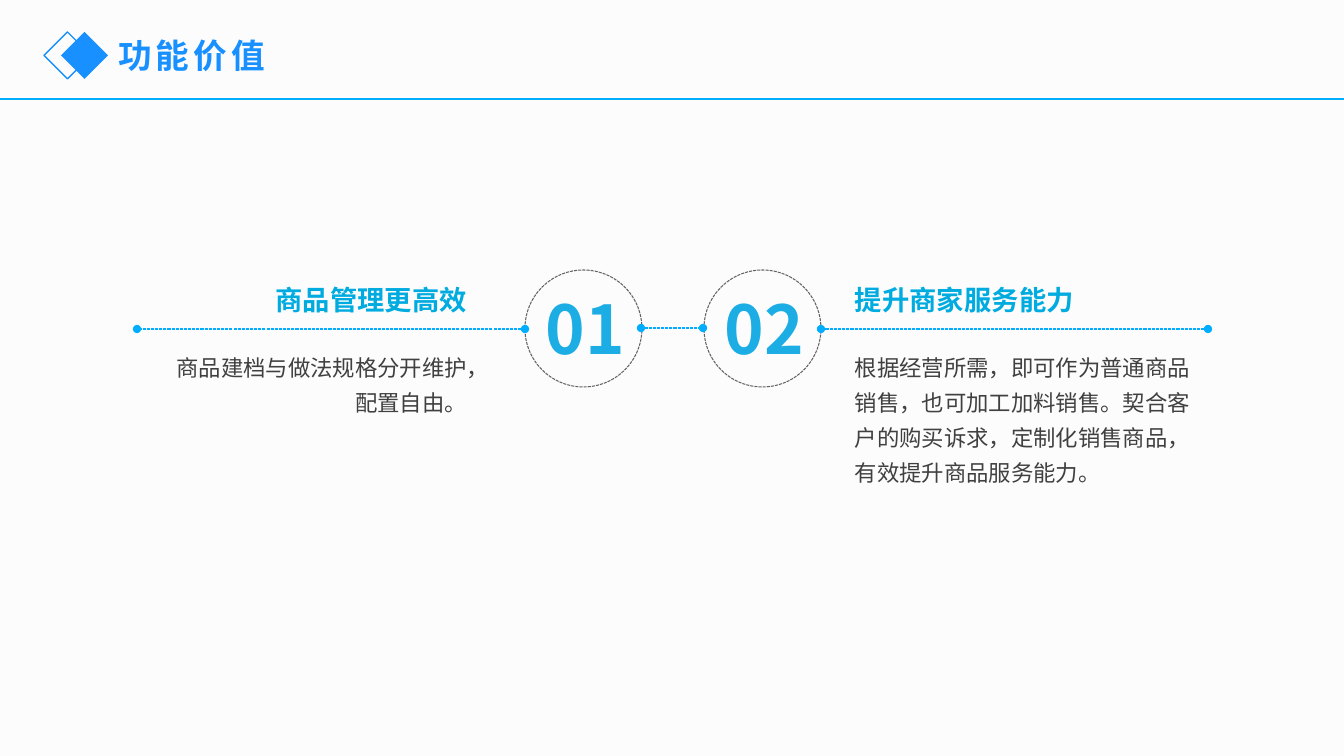
from lxml import etree
from pptx import Presentation
from pptx.dml.color import RGBColor
from pptx.enum.dml import MSO_LINE
from pptx.enum.shapes import MSO_CONNECTOR, MSO_SHAPE
from pptx.enum.text import MSO_ANCHOR, MSO_AUTO_SIZE, PP_ALIGN
from pptx.oxml.ns import qn
from pptx.util import Pt

LEFT, RIGHT = PP_ALIGN.LEFT, PP_ALIGN.RIGHT
TOP, MIDDLE = MSO_ANCHOR.TOP, MSO_ANCHOR.MIDDLE
DASH = MSO_LINE.SQUARE_DOT
STRAIGHT = MSO_CONNECTOR.STRAIGHT
DIAMOND, OVAL = MSO_SHAPE.DIAMOND, MSO_SHAPE.OVAL

FONT = "Noto Sans CJK SC"
COLORS = {
    "page": "FCFCFC",
    "title": "1890FF",
    "line": "00ADFF",
    "heading": "00ABE0",
    "body": "404040",
    "number": "1CADE4",
    "ring": "626262",
}
FORMATS = {
    "title": {"size": Pt(24), "bold": True},
    "heading": {"size": Pt(19.5), "bold": True},
    "body": {"size": Pt(16), "bold": False},
    "number": {"size": Pt(48), "bold": True},
}

TITLE = "功能价值"
VALUES = [
    {
        "number": "01",
        "heading": "商品管理更高效",
        "body": "商品建档与做法规格分开维护，配置自由。",
        "align": RIGHT,
        "ring_left": 525,
        "number_box": (536, 282, 163, 146),
        "heading_box": (141, 278, 336, 44),
        "body_box": (148, 341, 329, 88),
    },
    {
        "number": "02",
        "heading": "提升商家服务能力",
        "body": "根据经营所需，即可作为普通商品销售，也可加工加料销售。契合客户的购买诉求，定制化销售商品，有效提升商品服务能力。",
        "align": LEFT,
        "ring_left": 704,
        "number_box": (715, 282, 117, 100),
        "heading_box": (845, 278, 336, 44),
        "body_box": (845, 341, 360, 155),
    },
]
RING_TOP, RING_SIZE = 270, 117
DIAMOND_TOP, DIAMOND_SIZE = 32, 47
DIAMONDS = [(44, False), (61, True)]
DOTTED_LINES = [(641, 703, 328), (1208, 821, 329), (525, 137, 329)]
PAGE_WIDTH, PAGE_HEIGHT = 1344, 756


def px(value):
    return round(value * 914400 / 100.8)


def color(name):
    return RGBColor.from_string(COLORS[name])


def write(shape, words, style, align=LEFT, anchor=TOP, spacing=None):
    frame = shape.text_frame
    frame.word_wrap = True
    frame.auto_size = MSO_AUTO_SIZE.NONE
    frame.vertical_anchor = anchor
    para = frame.paragraphs[0]
    para.alignment = align
    if spacing:
        para.line_spacing = spacing
    span = para.add_run()
    span.text = words
    for name, value in FORMATS[style].items():
        setattr(span.font, name, value)
    span.font.name = FONT
    span.font.color.rgb = color(style)
    properties = span.font._element
    etree.SubElement(properties, qn("a:ea")).set("typeface", FONT)
    return properties


def add_text(page, box, *args, **options):
    write(page.shapes.add_textbox(*map(px, box)), *args, **options)


def add_outline(page, kind, left, top, size, line_color, width):
    shape = page.shapes.add_shape(kind, px(left), px(top), px(size), px(size))
    shape.shadow.inherit = False
    shape.fill.background()
    shape.line.color.rgb = color(line_color)
    shape.line.width = Pt(width)
    return shape


def add_line(page, start, end, y, width):
    line = page.shapes.add_connector(STRAIGHT, px(start), px(y), px(end), px(y))
    line.line.color.rgb = color("line")
    line.line.width = Pt(width)
    etree.SubElement(line._element.spPr, qn("a:effectLst"))
    return line


def add_dotted_line(page, start, end, y):
    line = add_line(page, start, end, y, 0.75)
    line.line.dash_style = DASH
    outline = line.line._get_or_add_ln()
    for tag in ("a:headEnd", "a:tailEnd"):
        etree.SubElement(outline, qn(tag)).set("type", "oval")


def add_header(page):
    add_line(page, 0, PAGE_WIDTH, 99, 1)
    for left, filled in DIAMONDS:
        diamond = add_outline(page, DIAMOND, left, DIAMOND_TOP, DIAMOND_SIZE, "title", 1)
        if filled:
            diamond.fill.solid()
            diamond.fill.fore_color.rgb = color("title")
            diamond.line.fill.background()
    title = page.shapes.title
    title.left, title.top, title.width, title.height = map(px, (108, 30, 553, 50))
    write(title, TITLE, "title", anchor=MIDDLE).set("spc", "300")


def add_value(page, value):
    add_text(page, value["heading_box"], value["heading"], "heading", value["align"])
    add_text(page, value["body_box"], value["body"], "body", value["align"], spacing=1.3)
    add_text(page, value["number_box"], value["number"], "number")
    ring = add_outline(page, OVAL, value["ring_left"], RING_TOP, RING_SIZE, "ring", 0.75)
    ring.line.dash_style = DASH


def main():
    deck = Presentation()
    deck.slide_width, deck.slide_height = px(PAGE_WIDTH), px(PAGE_HEIGHT)
    page = deck.slides.add_slide(deck.slide_layouts[5])
    page.background.fill.solid()
    page.background.fill.fore_color.rgb = color("page")
    add_header(page)
    for value in VALUES:
        add_value(page, value)
    for start, end, y in DOTTED_LINES:
        add_dotted_line(page, start, end, y)
    deck.save("out.pptx")


if __name__ == "__main__":
    main()
